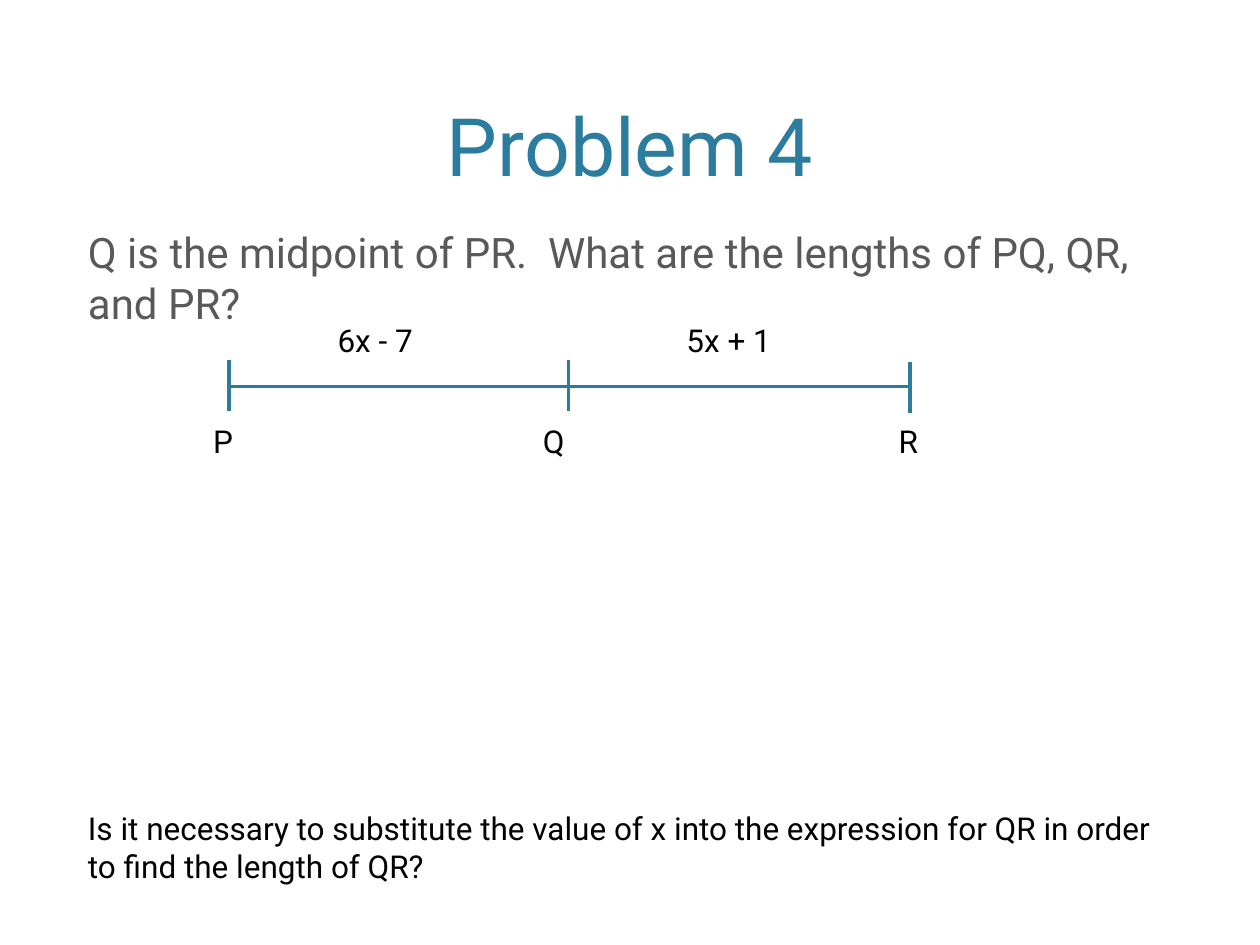
from lxml import etree
from pptx import Presentation
from pptx.dml.color import RGBColor
from pptx.enum import shapes, text
from pptx.oxml import ns
from pptx.util import Pt

TEAL = RGBColor(0x2C, 0x7C, 0x9F)
GRAY = RGBColor(0x59, 0x59, 0x59)
BLACK = RGBColor(0, 0, 0)
LEFT, CENTER = text.PP_ALIGN.LEFT, text.PP_ALIGN.CENTER
TOP, BOTTOM = text.MSO_ANCHOR.TOP, text.MSO_ANCHOR.BOTTOM

deck = Presentation()
deck.slide_width, deck.slide_height = Pt(720), Pt(540)
page = deck.slides.add_slide(deck.slide_layouts[6])


def add_text(words, left, top, width, height, size=18, color=BLACK,
             align=LEFT, anchor=TOP):
    box = page.shapes.add_textbox(Pt(left), Pt(top), Pt(width), Pt(height))
    frame = box.text_frame
    frame.word_wrap = True
    frame.vertical_anchor = anchor
    para = frame.paragraphs[0]
    para.alignment = align
    span = para.add_run()
    span.text = words
    span.font.name = "Roboto"
    span.font.size = Pt(size)
    span.font.color.rgb = color


def add_line(x1, y1, x2, y2):
    line = page.shapes.add_connector(
        shapes.MSO_CONNECTOR.STRAIGHT, Pt(x1), Pt(y1), Pt(x2), Pt(y2))
    line.line.color.rgb = TEAL
    line.line.width = Pt(2)
    etree.SubElement(line._element.spPr, ns.qn("a:effectLst"))


# Title and question
margin, full_width = 43.2, 633.6
add_text("Problem 4", margin, 8.6, full_width, 105.1, 46, TEAL, CENTER, BOTTOM)
add_text("Q is the midpoint of PR.  What are the lengths of PQ, QR, and PR?",
         margin, 126, full_width, 342, 24, GRAY)

# Segment with a tick and a name at each point
points = [("P", 131, 206, 127.5), ("Q", 325, 206, 316.5), ("R", 520, 207, 519)]
add_line(points[0][1], 221, points[-1][1], 221)
label_width = 36
for name, x, tick_top, label_center in points:
    add_line(x, tick_top, x, tick_top + 29)
    add_text(name, label_center - label_width / 2, 237.6, label_width, 29,
             align=CENTER)

# Length of each half
for length, left in [("6x - 7", 185.8), ("5x + 1", 385.2)]:
    add_text(length, left, 180, 88.6, 29)

# Follow-up question
add_text("Is it necessary to substitute the value of x into the expression "
         "for QR in order to find the length of QR?",
         margin, 458.6, full_width, 51)

deck.save("out.pptx")
